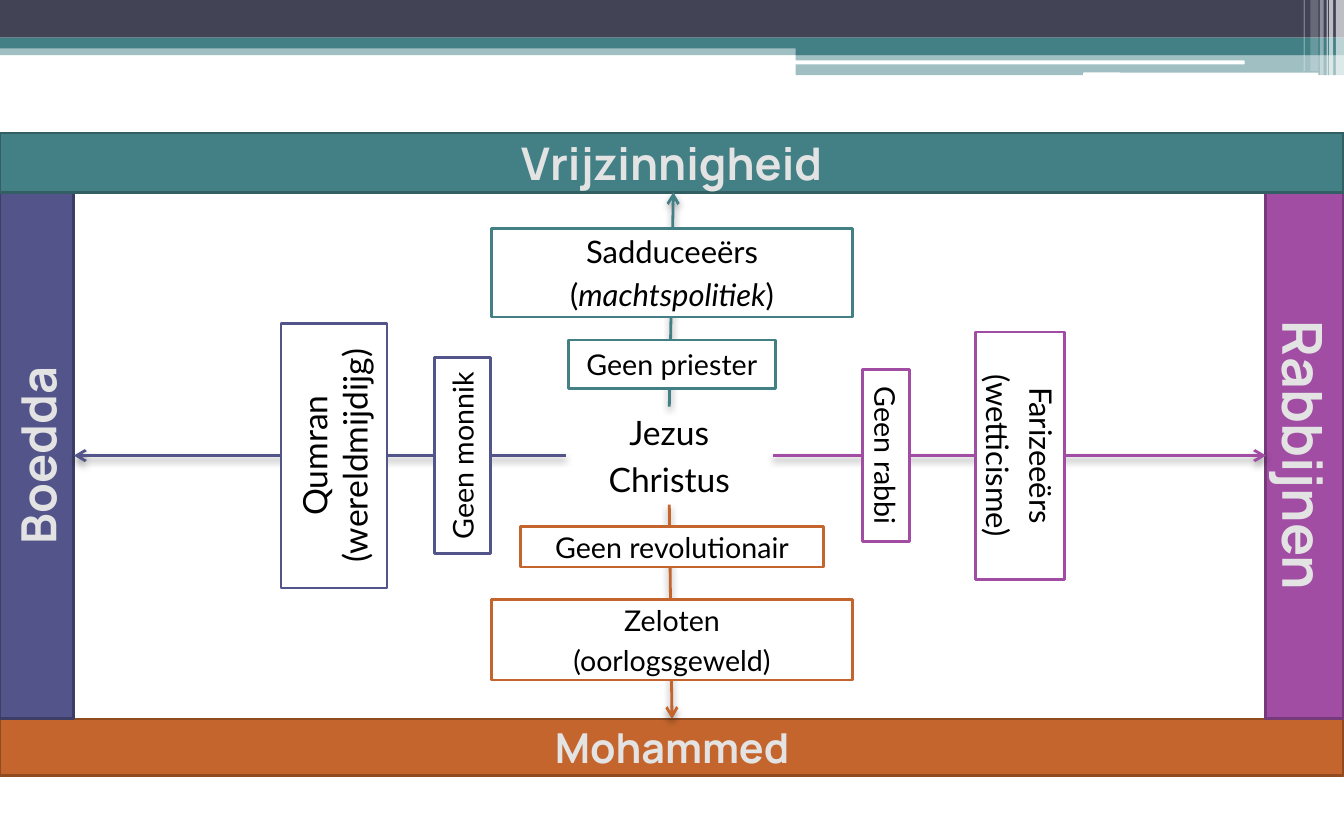
from lxml import etree
from pptx import Presentation, util as u
from pptx.dml.color import RGBColor
from pptx.enum import shapes, text
from pptx.oxml import parse_xml
from pptx.oxml.ns import qn

NS = 'xmlns:a="http://schemas.openxmlformats.org/drawingml/2006/main"'
TEAL, PURPLE, ORANGE, INDIGO = "438086", "A04DA3", "C4652D", "53548A"
WHITE, BLACK = "FFFFFF", "000000"

prs = Presentation()
prs.slide_width, prs.slide_height = u.Inches(10), u.Inches(6.25)
cell = prs.slide_width // 1000  # the grid has 1000 columns and 625 rows
slide = prs.slides.add_slide(prs.slide_layouts[6])
hexcolor = RGBColor.from_string


def add_block(left, top, width, height, fill, alpha=100, border=None, kind="RECTANGLE"):
    """Place a filled shape, measured in grid cells."""
    block = slide.shapes.add_shape(
        shapes.MSO_SHAPE[kind], *(round(n * cell) for n in (left, top, width, height)))
    block.shadow.inherit = False
    if fill:
        block.fill.solid()
        block.fill.fore_color.rgb = hexcolor(fill)
    else:
        block.fill.background()
    if alpha < 100:
        color = block.fill._xPr.find(qn("a:solidFill"))[0]
        etree.SubElement(color, qn("a:alpha")).set("val", str(alpha * 1000))
    if border:
        block.line.color.rgb = hexcolor(border)
        block.line.width = u.Pt(1.5)
    else:
        block.line.fill.background()
    return block


def add_label(center, size, turn, lines, points, fill, border, font="Lato", color=BLACK):
    """Place a centred label; each line is a list of (words, italic)."""
    (x, y), (width, height) = center, size
    label = add_block(x - width / 2, y - height / 2, width, height, fill, border=border)
    label.rotation = turn
    frame = label.text_frame
    layout = {"word_wrap": True, "vertical_anchor": text.MSO_ANCHOR.MIDDLE,
              "margin_left": 5 * cell, "margin_right": 5 * cell}
    for key, value in layout.items():
        setattr(frame, key, value)
    for i, line in enumerate(lines):
        para = frame.add_paragraph() if i else frame.paragraphs[0]
        para.alignment = text.PP_ALIGN.CENTER
        para.space_before = u.Pt(0.2 * points)
        para.text = "" if isinstance(line, list) else line
        for words, italic in line if isinstance(line, list) else []:
            para.add_run().text = words
            para.runs[-1].font.italic = italic
        for run in para.runs:
            style = {"name": font, "size": u.Pt(points), "bold": font == "Manrope"}
            for key, value in style.items():
                setattr(run.font, key, value)
            run.font.color.rgb = hexcolor(color)
            if font == "Manrope":
                run.font._element.insert(0, parse_xml(
                    f'<a:ln {NS} w="12700"><a:solidFill><a:srgbClr val="3D405C"/>'
                    '</a:solidFill></a:ln>'))
    return label


# Header: horizontal bands
for band in [
    (0, 33, 1000, 8, TEAL, 50), (0, 0, 1000, 28, "424456"), (0, 28, 1000, 8, TEAL),
    (592, 33, 408, 8, TEAL), (592, 40, 408, 16, TEAL, 50),
]:
    add_block(*band)
for left, top, width in [(591, 45, 335), (806, 54, 175)]:
    add_block(left, top, width, 3, WHITE, kind="ROUNDED_RECTANGLE")

# Header: translucent stripes at the right
for left, width, height, alpha in [
    (994, 6, 57, 65), (989, 3, 57, 65), (987, 1, 57, 60),
    (982, 3, 57, 40), (975, 6, 53, 20), (970, 1, 53, 30),
]:
    add_block(left, 0, width, height, WHITE, alpha)

# Centre of the cross
mid_x, mid_y = 500, 339
jesus = add_label((498, mid_y), (154, 73), 0, ["Jezus", "Christus"], 18, None, None)

# Outer frame with one arrow to each side:
# words, centre, size, turn, points, fill, border, start site, end site, arrow tip
frame_sides = [
    ("Mohammed", (mid_x, 556), (1000, 42), 0, 22.1, ORANGE, "914B21", 2, 0, (500, 535)),
    ("Rabbijnen", (970.5, mid_y), (391, 58), 90, 29.6, PURPLE, "763979", 3, 2, (942, mid_y)),
    ("Boedda", (27.5, mid_y), (391, 55), 270, 26, INDIGO, "3D3E66", 1, 2, (55, mid_y)),
    ("Vrijzinnigheid", (mid_x, 121), (1000, 44), 0, 24.1, TEAL, "325F63", 0, 2, (501, 143)),
]
for words, center, size, turn, points, fill, border, start, end, tip in frame_sides:
    side = add_label(center, size, turn, [words], points, fill, border, "Manrope", "E3E3E3")
    arrow = slide.shapes.add_connector(shapes.MSO_CONNECTOR.STRAIGHT, 0, 0, cell, cell)
    arrow.begin_connect(jesus, start)
    arrow.end_connect(side, end)
    arrow.end_x, arrow.end_y = (n * cell for n in tip)  # allows for turned sides
    arrow.line.color.rgb = hexcolor(fill)
    arrow.line.width = u.Pt(1.5)
    etree.SubElement(arrow.line._get_or_add_ln(), qn("a:tailEnd")).set("type", "arrow")
    arrow._element.spPr.append(parse_xml(
        f'<a:effectLst {NS}><a:outerShdw blurRad="52000" dist="25400" dir="5400000" '
        'rotWithShape="0"><a:srgbClr val="000000"><a:alpha val="40000"/></a:srgbClr>'
        '</a:outerShdw></a:effectLst>'))

# Groups along the arrows: centre, size, turn, lines, points, border
for center, size, turn, lines, points, border in [
    ((344, mid_y), (146, 42), 270, ["Geen monnik"], 15.3, INDIGO),
    ((659, mid_y), (128, 35), 90, ["Geen rabbi"], 15.3, PURPLE),
    ((mid_x, 271), (154, 36), 0, ["Geen priester"], 15.3, TEAL),
    ((mid_x, 203), (269, 66), 0,
     ["Sadduceeërs", [("(", False), ("machtspolitiek", True), (")", False)]], 16.6, TEAL),
    ((mid_x, 407), (225, 30), 0, ["Geen revolutionair"], 15.3, ORANGE),
    ((759, mid_y), (184, 66), 90, ["Farizeeërs", "(wetticisme)"], 16.6, PURPLE),
    ((248.5, mid_y), (197, 79), 270, ["Qumran\v(wereldmijdijg)"], 18, INDIGO),
    ((mid_x, 476), (269, 60), 0, ["Zeloten", "(oorlogsgeweld)"], 15.3, ORANGE),
]:
    add_label(center, size, turn, lines, points, WHITE, border)

prs.save("out.pptx")
